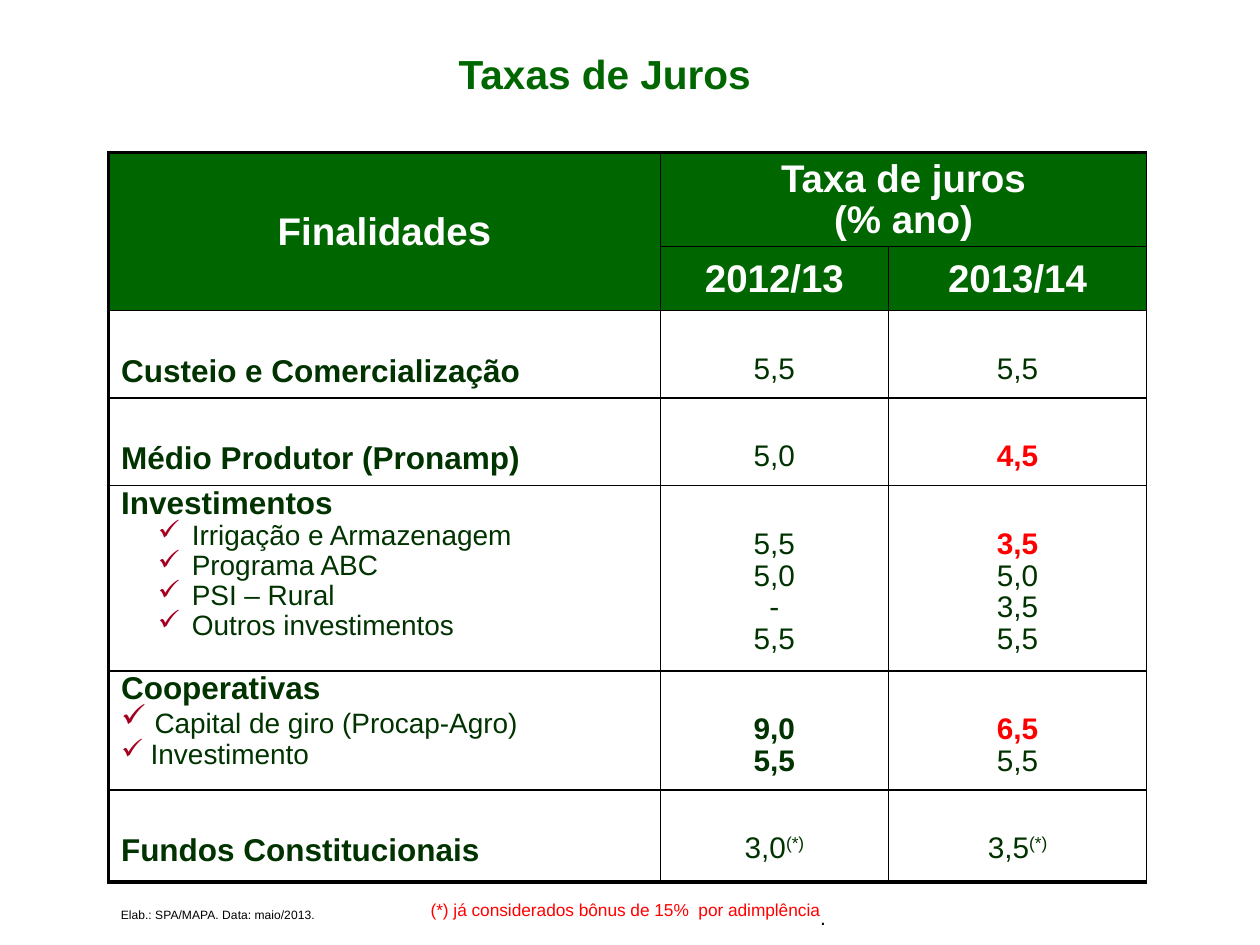
from lxml import etree
from pptx import Presentation
from pptx.dml.color import RGBColor
from pptx.enum.text import MSO_ANCHOR as ANCHOR, PP_ALIGN as ALIGN
from pptx.oxml.ns import qn
from pptx.util import Pt

GREEN, DARK, RED, WHITE, BLACK = "006600", "003300", "FF0000", "FFFFFF", "000000"
CHECK = "A50021"


def rgb(color):
    return RGBColor.from_string(color)


def add_runs(p, runs):
    """Add runs given as (text, size, bold, color, baseline in percent)."""
    for text, size, bold, color, base in runs:
        r = p.add_run()
        r.text = text
        f = r.font
        f.name, f.size, f.bold, f.color.rgb = "Arial", Pt(size), bold, rgb(color)
        if base:
            r._r.get_or_add_rPr().set("baseline", str(base * 1000))


prs = Presentation()
prs.slide_width, prs.slide_height = Pt(720), Pt(540)
s = prs.slides.add_slide(prs.slide_layouts[6])

# Title
tf = s.shapes.add_textbox(Pt(-14.4), Pt(16), Pt(720), Pt(55)).text_frame
tf.word_wrap = True
tf.margin_top = Pt(7)
p = tf.paragraphs[0]
p.alignment = ALIGN.CENTER
add_runs(p, [("Taxas de Juros", 40, True, GREEN, 30)])

# Table texts: each line is (text, bold, color) for values,
# (text, bullet level) for labels, where None is a heading
labels = [
    [("Custeio e Comercialização", None)],
    [("Médio Produtor (Pronamp)", None)],
    [("Investimentos", None), (" Irrigação e Armazenagem", 1), (" Programa ABC", 1),
     (" PSI – Rural", 1), (" Outros investimentos", 1)],
    [("Cooperativas", None), (" Capital de giro (Procap-Agro)", 0), (" Investimento", 0)],
    [("Fundos Constitucionais", None)],
]
plain, strong, new = (False, DARK), (True, DARK), (True, RED)
values = [
    ([("5,5", plain)], [("5,5", plain)]),
    ([("5,0", plain)], [("4,5", new)]),
    ([("5,5", plain), ("5,0", plain), ("-", plain), ("5,5", plain)],
     [("3,5", new), ("5,0", plain), ("3,5", plain), ("5,5", plain)]),
    ([("9,0", strong), ("5,5", strong)], [("6,5", new), ("5,5", plain)]),
    ([("3,0(*)", plain)], [("3,5(*)", plain)]),
]
widths = [315.4, 130.3, 147.6]
heights = [54, 36.5, 50, 50, 106, 68, 52.5]

table = s.shapes.add_table(len(heights), len(widths), Pt(62), Pt(87),
                           Pt(sum(widths)), Pt(sum(heights))).table
for col, width in zip(table.columns, widths):
    col.width = Pt(width)
for row, height in zip(table.rows, heights):
    row.height = Pt(height)
table.cell(0, 0).merge(table.cell(1, 0))
table.cell(0, 1).merge(table.cell(0, 2))

# Borders and fills
last = len(heights) - 1
for i in range(len(heights)):
    for j in range(len(widths)):
        cell = table.cell(i, j)
        cell.margin_bottom = 0
        tcPr = cell._tc.get_or_add_tcPr()
        for side, thick in (("L", j == 0), ("R", False), ("T", i == 0), ("B", i == last)):
            ln = etree.SubElement(tcPr, qn("a:ln" + side), w=str(Pt(2.25 if thick else 1)))
            fill = etree.SubElement(ln, qn("a:solidFill"))
            etree.SubElement(fill, qn("a:srgbClr"), val=BLACK)
        cell.fill.solid()
        cell.fill.fore_color.rgb = rgb(GREEN if i < 2 else WHITE)

# Header
headers = {(0, 0): ["Finalidade"], (0, 1): ["Taxa de juros", "(% ano)"],
           (1, 1): ["2012/13"], (1, 2): ["2013/14"]}
for (i, j), lines in headers.items():
    cell = table.cell(i, j)
    cell.vertical_anchor = ANCHOR.MIDDLE
    for k, text in enumerate(lines):
        p = cell.text_frame.add_paragraph() if k else cell.text_frame.paragraphs[0]
        p.alignment = ALIGN.CENTER
        p.line_spacing = 0.8
        p.space_before = Pt(4 if k else 0)
        add_runs(p, [(text, 22, True, WHITE, 0)])
add_runs(table.cell(0, 0).text_frame.paragraphs[0], [("s", 24, True, WHITE, 0)])

# Body
for i, (label, rates) in enumerate(zip(labels, values), 2):
    cell = table.cell(i, 0)
    if len(label) == 1:
        cell.margin_top = Pt(28)
    for k, (text, level) in enumerate(label):
        p = cell.text_frame.add_paragraph() if k else cell.text_frame.paragraphs[0]
        p.line_spacing = 0.8
        p.space_before = Pt(3 if k else 0)
        if level is None:
            add_runs(p, [(text, 18, True, DARK, 0)])
            continue
        p.level = level
        pPr = p._p.get_or_add_pPr()
        pPr.set("marL", str(Pt(36 * level)))
        pPr.set("indent", str(Pt(-15 * level)))
        clr = etree.SubElement(pPr, qn("a:buClr"))
        etree.SubElement(clr, qn("a:srgbClr"), val=CHECK)
        etree.SubElement(pPr, qn("a:buChar"), char="✓")
        if text.startswith(" Capital"):
            add_runs(p, [(" ", 18, False, DARK, 0)])
            text = text.strip()
        add_runs(p, [(text, 16, False, DARK, 0)])
    for j, lines in enumerate(rates, 1):
        cell = table.cell(i, j)
        cell.margin_top = Pt(27)
        for k, (text, (bold, color)) in enumerate(lines):
            p = cell.text_frame.add_paragraph() if k else cell.text_frame.paragraphs[0]
            p.alignment = ALIGN.CENTER
            p.line_spacing = 0.8
            p.space_before = Pt(3 if k else 0)
            number, mark, _ = text.partition("(*)")
            add_runs(p, [(number, 17, bold, color, 0)])
            if mark:
                add_runs(p, [(mark, 17, bold, color, 30)])

# Footnote
tf = s.shapes.add_textbox(Pt(62), Pt(507), Pt(593.3), Pt(22)).text_frame
tf.word_wrap = True
tf.margin_top = Pt(5)
p = tf.paragraphs[0]
tabs = etree.SubElement(p._p.get_or_add_pPr(), qn("a:tabLst"))
etree.SubElement(tabs, qn("a:tab"), pos=str(Pt(177)), algn="l")
add_runs(p, [
    ("Elab.: SPA/MAPA. Data: maio/2013.\t", 12, False, BLACK, 30),
    ("(*) já considerados bônus de 15%  por adimplência", 17, False, RED, 30),
    (".", 12, False, BLACK, 0),
])

prs.save("out.pptx")
